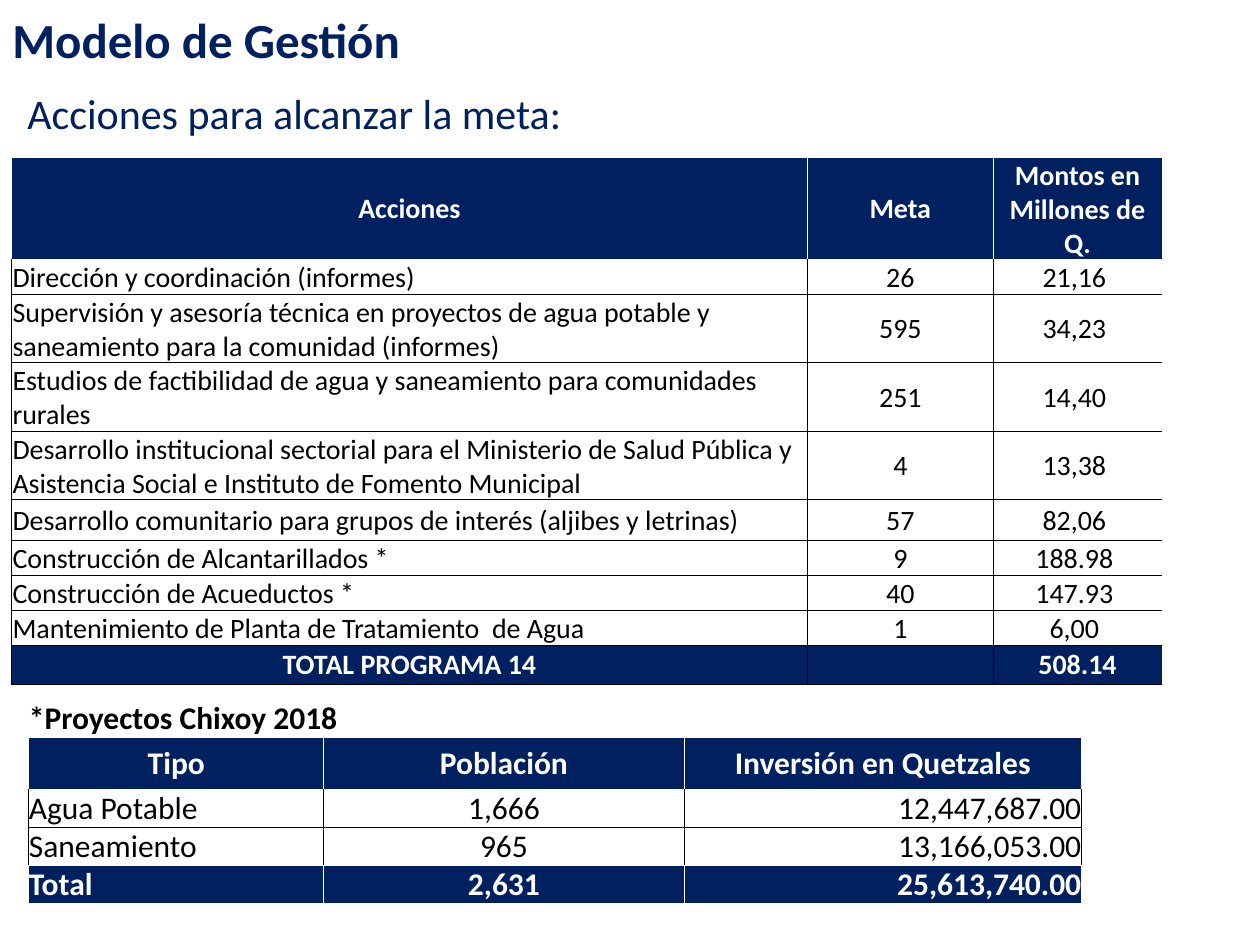
from dataclasses import dataclass
from typing import NamedTuple, Optional

from lxml.etree import SubElement
from pptx import Presentation
from pptx.dml.color import RGBColor
from pptx.enum.text import MSO_ANCHOR as Anchor, PP_ALIGN as Align
from pptx.oxml.ns import qn
from pptx.util import Pt

NAVY, WHITE, BLACK = "002060", "FFFFFF", "000000"
FONT = "Calibri"


class RowStyle(NamedTuple):
    """Look of a row; a border colour of None means no line."""
    fill: Optional[str]
    color: str
    bold: bool
    sides: Optional[str]
    top: Optional[str]
    bottom: Optional[str]
    anchor: Anchor = Anchor.MIDDLE


class Row(NamedTuple):
    height: float
    style: RowStyle
    texts: tuple
    aligns: Optional[tuple] = None


@dataclass
class TableSpec:
    left: float
    top: float
    widths: tuple
    rows: list
    aligns: tuple
    size: float
    margin: float
    open_right: bool = False


def rgb(value: str) -> RGBColor:
    return RGBColor.from_string(value)


def write(text_frame, text: str, *, size: float, color: str, bold: bool = False,
          align: Align = Align.LEFT) -> None:
    paragraph = text_frame.paragraphs[0]
    paragraph.alignment = align
    run = paragraph.add_run()
    run.text = text
    run.font.name = FONT
    run.font.size = Pt(size)
    run.font.bold = bold
    run.font.color.rgb = rgb(color)


def add_heading(slide, left: float, top: float, width: float, height: float,
                text: str, **text_format) -> None:
    shape = slide.shapes.add_textbox(Pt(left), Pt(top), Pt(width), Pt(height))
    shape.text_frame.word_wrap = True
    shape.text_frame.vertical_anchor = Anchor.MIDDLE
    write(shape.text_frame, text, color=NAVY, **text_format)


def set_borders(cell, left, right, top, bottom) -> None:
    properties = cell._tc.get_or_add_tcPr()
    borders = zip(("a:lnL", "a:lnR", "a:lnT", "a:lnB"), (left, right, top, bottom))
    for index, (tag, color) in enumerate(borders):
        line = SubElement(properties, qn(tag), w=str(Pt(0.5)))
        if color:
            fill = SubElement(line, qn("a:solidFill"))
            SubElement(fill, qn("a:srgbClr"), val=color)
        else:
            SubElement(line, qn("a:noFill"))
        properties.insert(index, line)  # borders come before the cell fill


def format_cell(cell, style: RowStyle, margin: float, right: Optional[str]) -> None:
    cell.margin_left = cell.margin_right = cell.margin_top = Pt(margin)
    cell.margin_bottom = Pt(0)
    cell.vertical_anchor = style.anchor
    if style.fill:
        cell.fill.solid()
        cell.fill.fore_color.rgb = rgb(style.fill)
    else:
        cell.fill.background()
    set_borders(cell, style.sides, right, style.top, style.bottom)


def add_table(slide, spec: TableSpec):
    height = sum(row.height for row in spec.rows)
    table = slide.shapes.add_table(
        len(spec.rows), len(spec.widths), Pt(spec.left), Pt(spec.top),
        Pt(sum(spec.widths)), Pt(height)).table
    table.first_row = table.horz_banding = False
    for column, width in zip(table.columns, spec.widths):
        column.width = Pt(width)
    last = len(spec.widths) - 1
    for row_index, row in enumerate(spec.rows):
        table.rows[row_index].height = Pt(row.height)
        style = row.style
        for index, (text, align) in enumerate(zip(row.texts, row.aligns or spec.aligns)):
            cell = table.cell(row_index, index)
            is_open = spec.open_right and index == last
            format_cell(cell, style, spec.margin, None if is_open else style.sides)
            write(cell.text_frame, text, size=spec.size, color=style.color,
                  bold=style.bold, align=align)
    return table


# Row styles
HEADER = RowStyle(NAVY, WHITE, True, WHITE, WHITE, WHITE)
FIRST = RowStyle(None, BLACK, False, BLACK, WHITE, BLACK)
BODY = FIRST._replace(top=BLACK)
PROGRAM_TOTAL = RowStyle(NAVY, WHITE, True, BLACK, BLACK, BLACK)
CAPTION = RowStyle(None, BLACK, True, None, None, WHITE, Anchor.BOTTOM)
FIRST_TYPE = FIRST._replace(anchor=Anchor.BOTTOM)
LAST_TYPE = FIRST_TYPE._replace(top=BLACK, bottom=WHITE)
TYPE_TOTAL = HEADER._replace(anchor=Anchor.BOTTOM)

CENTERED = (Align.CENTER,) * 3

ACTIONS = TableSpec(
    left=6.5, top=90, widths=(455, 106, 96.5), size=16, margin=0.7, open_right=True,
    aligns=(Align.LEFT, Align.CENTER, Align.CENTER),
    rows=[
        Row(53, HEADER, ("Acciones", "Meta", "Montos en Millones de Q."), CENTERED),
        Row(19.5, FIRST, ("Dirección y coordinación (informes)", "26", "21,16 ")),
        Row(38, BODY, ("Supervisión y asesoría técnica en proyectos de agua potable y "
                       "saneamiento para la comunidad (informes)", "595", "34,23 ")),
        Row(38, BODY, ("Estudios de factibilidad de agua y saneamiento para "
                       "comunidades rurales", "251", "14,40 ")),
        Row(38, BODY, ("Desarrollo institucional sectorial para el Ministerio de Salud "
                       "Pública y Asistencia Social e Instituto de Fomento Municipal",
                       "4", "13,38 ")),
        Row(23.5, BODY, ("Desarrollo comunitario para grupos de interés "
                         "(aljibes y letrinas)", "57", "82,06 ")),
        Row(19.5, BODY, ("Construcción de Alcantarillados *", "9", "188.98 ")),
        Row(19.5, BODY, ("Construcción de Acueductos *", "40", "147.93 ")),
        Row(19.5, BODY, ("Mantenimiento de Planta de Tratamiento  de Agua", "1", "6,00 ")),
        Row(19.5, PROGRAM_TOTAL, ("TOTAL PROGRAMA 14", "", "508.14"), CENTERED),
    ])

PROJECTS = TableSpec(
    left=16.5, top=399.5, widths=(168.5, 206, 227), size=18, margin=0,
    aligns=(Align.LEFT, Align.CENTER, Align.RIGHT),
    rows=[
        Row(15, CAPTION, ("*Proyectos Chixoy 2018", "", "")),
        Row(30, HEADER, ("Tipo", "Población", "Inversión en Quetzales"), CENTERED),
        Row(20.5, FIRST_TYPE, ("Agua Potable", "1,666", "12,447,687.00")),
        Row(20.5, LAST_TYPE, ("Saneamiento", "965", "13,166,053.00")),
        Row(20.5, TYPE_TOTAL, ("Total", "2,631", "25,613,740.00")),
    ])


def main() -> None:
    presentation = Presentation()
    presentation.slide_width, presentation.slide_height = Pt(720), Pt(540)
    slide = presentation.slides.add_slide(presentation.slide_layouts[6])

    # Headings
    add_heading(slide, 0, 0, 430.5, 44.5, "Modelo de Gestión", size=28, bold=True)
    add_heading(slide, 8.5, 44.5, 397, 39.5, "Acciones para alcanzar la meta:", size=24)

    # Actions of the programme, then the projects with a caption over two columns
    add_table(slide, ACTIONS)
    projects = add_table(slide, PROJECTS)
    projects.cell(0, 0).merge(projects.cell(0, 1))

    presentation.save("out.pptx")


if __name__ == "__main__":
    main()
